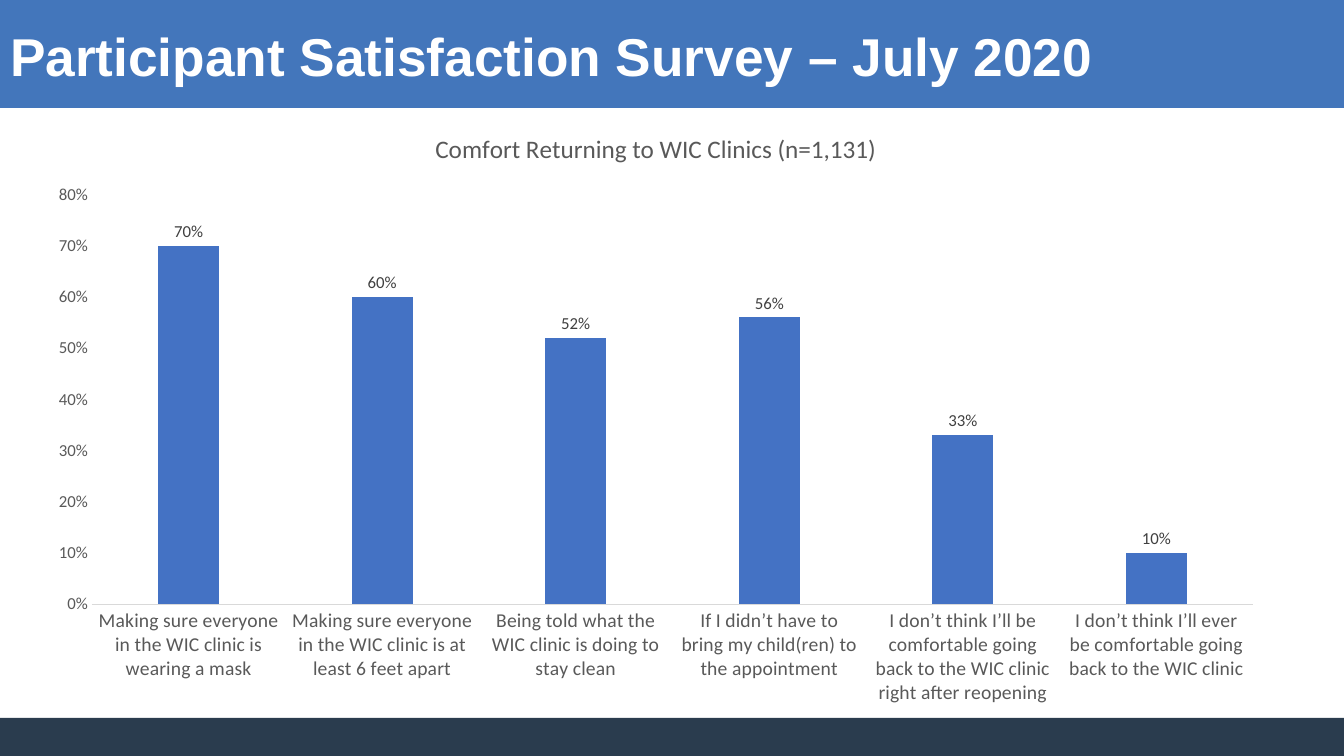
from dataclasses import dataclass

from pptx import Presentation
from pptx.chart.data import CategoryChartData
from pptx.dml.color import RGBColor
from pptx.enum.chart import XL_CHART_TYPE, XL_LABEL_POSITION, XL_TICK_MARK
from pptx.enum.shapes import MSO_SHAPE
from pptx.enum.text import MSO_ANCHOR, MSO_AUTO_SIZE, PP_ALIGN
from pptx.util import Pt

EMU_PER_PIXEL = 914400 / 100.8


@dataclass(frozen=True)
class Theme:
    header: str = "4376BB"
    footer: str = "2A3C4E"
    bar: str = "4472C4"
    white: str = "FFFFFF"
    chart_text: str = "595959"
    label_text: str = "404040"
    axis_line: str = "D9D9D9"
    title_font: str = "Arial"
    chart_font: str = "Calibri"
    title_size: int = 38
    chart_title_size: int = 18
    category_size: int = 14
    value_size: int = 12


theme = Theme()


def pixels(*lengths):
    return [round(length * EMU_PER_PIXEL) for length in lengths]


def style_font(font, name, size, color, bold=False):
    font.name = name
    font.size = Pt(size)
    font.bold = bold
    font.color.rgb = RGBColor.from_string(color)


presentation = Presentation()
presentation.slide_width, presentation.slide_height = pixels(1344, 756)
slide = presentation.slides.add_slide(presentation.slide_layouts[5])

for top, height, color in ((0, 108, theme.header), (718, 38, theme.footer)):
    band = slide.shapes.add_shape(MSO_SHAPE.RECTANGLE, *pixels(0, top, 1344, height))
    band.shadow.inherit = False
    band.fill.solid()
    band.fill.fore_color.rgb = RGBColor.from_string(color)
    band.line.fill.background()

title = slide.shapes.title
slide.shapes.element.append(title.element)
title.left, title.top, title.width, title.height = pixels(0, 25, 1254, 84)
title_frame = title.text_frame
title_frame.text = "Participant Satisfaction Survey – July 2020"
title_frame.auto_size = MSO_AUTO_SIZE.NONE
title_frame.word_wrap = True
title_frame.vertical_anchor = MSO_ANCHOR.TOP
title_frame.margin_left, title_frame.margin_top = pixels(10, 6)
title_paragraph = title_frame.paragraphs[0]
title_paragraph.alignment = PP_ALIGN.LEFT
title_paragraph.line_spacing = 0.9
style_font(title_paragraph.runs[0].font, theme.title_font, theme.title_size, theme.white, True)

comfort_shares = {
    "Making sure everyone in the WIC clinic is wearing a mask": 0.70,
    "Making sure everyone in the WIC clinic is at least 6 feet apart": 0.60,
    "Being told what the WIC clinic is doing to stay clean": 0.52,
    "If I didn’t have to bring my child(ren) to the appointment": 0.56,
    "I don’t think I’ll be comfortable going back to the WIC clinic right after reopening": 0.33,
    "I don’t think I’ll ever be comfortable going back to the WIC clinic": 0.10,
}
chart_data = CategoryChartData(number_format="0%")
chart_data.categories = list(comfort_shares)
chart_data.add_series("Series 1", list(comfort_shares.values()))
chart = slide.shapes.add_chart(
    XL_CHART_TYPE.COLUMN_CLUSTERED, *pixels(34, 109, 1244, 608), chart_data
).chart
style_font(chart.font, theme.chart_font, theme.value_size, theme.chart_text)
chart.has_legend = False
chart.has_title = True
chart_title = chart.chart_title
chart_title.include_in_layout = False
chart_title.text_frame.text = "Comfort Returning to WIC Clinics (n=1,131)"
chart_title_run = chart_title.text_frame.paragraphs[0].runs[0]
style_font(chart_title_run.font, theme.chart_font, theme.chart_title_size, theme.chart_text)

for axis, size in (
    (chart.category_axis, theme.category_size),
    (chart.value_axis, theme.value_size),
):
    axis.major_tick_mark = XL_TICK_MARK.NONE
    axis.minor_tick_mark = XL_TICK_MARK.NONE
    axis.has_major_gridlines = False
    style_font(axis.tick_labels.font, theme.chart_font, size, theme.chart_text)

category_line = chart.category_axis.format.line
category_line.color.rgb = RGBColor.from_string(theme.axis_line)
category_line.width = Pt(0.75)

value_axis = chart.value_axis
value_axis.format.line.fill.background()
value_axis.minimum_scale = 0
value_axis.maximum_scale = 0.8
value_axis.major_unit = 0.1
value_axis.tick_labels.number_format = "0%"
value_axis.tick_labels.number_format_is_linked = False

plot = chart.plots[0]
plot.vary_by_categories = False
plot.gap_width = 219
plot.overlap = -27
bars = plot.series[0]
bars.format.fill.solid()
bars.format.fill.fore_color.rgb = RGBColor.from_string(theme.bar)
bars.invert_if_negative = False

labels = bars.data_labels
labels.show_value = True
labels.position = XL_LABEL_POSITION.OUTSIDE_END
labels.number_format = "0%"
labels.number_format_is_linked = False
style_font(labels.font, theme.chart_font, theme.value_size, theme.label_text)

presentation.save("out.pptx")
